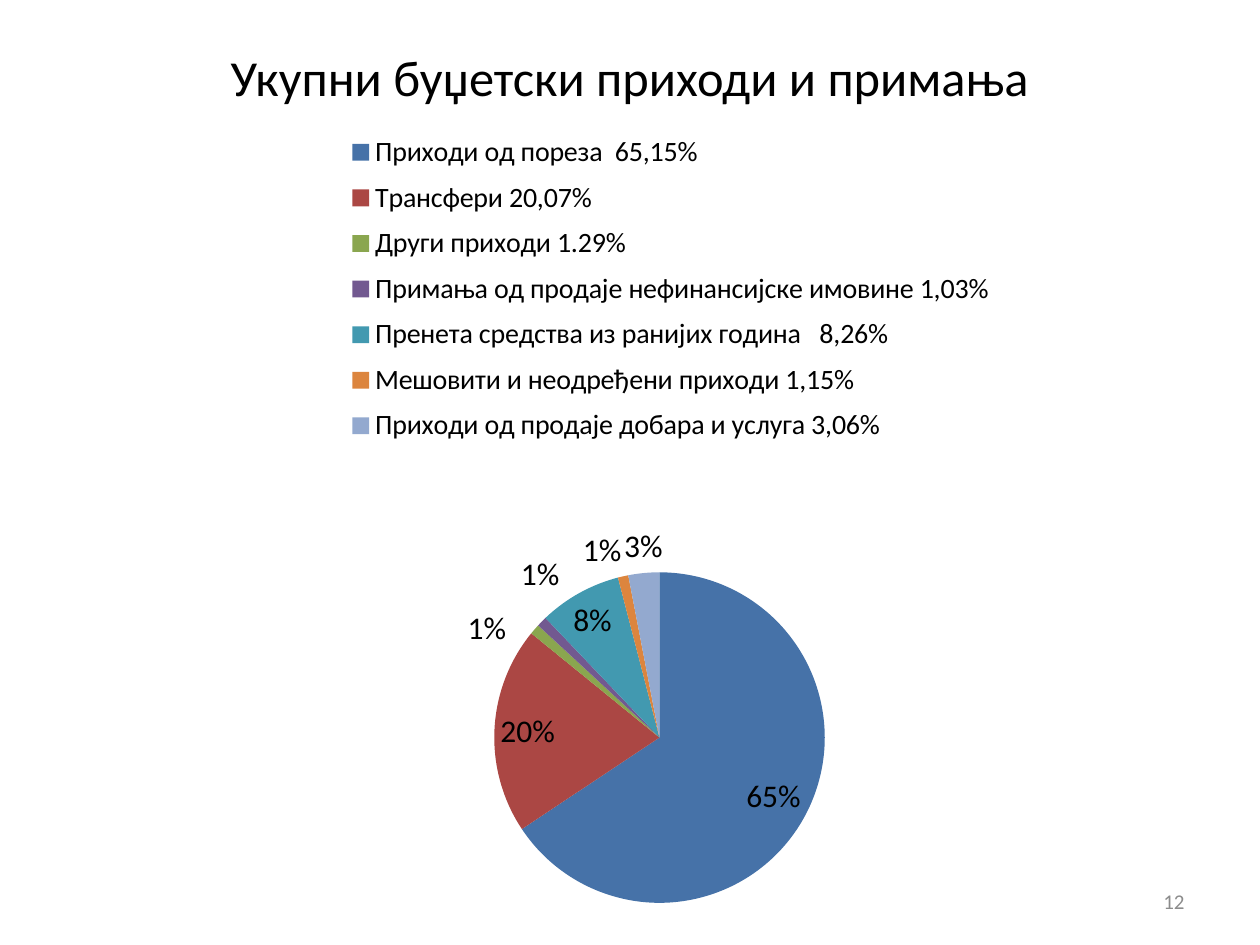
from dataclasses import dataclass

from lxml.etree import SubElement
from pptx import Presentation
from pptx.chart.data import CategoryChartData as ChartData
from pptx.dml.color import RGBColor as Color
from pptx.enum.chart import XL_CHART_TYPE as ChartType
from pptx.enum.chart import XL_LABEL_POSITION as LabelPosition
from pptx.enum.chart import XL_LEGEND_POSITION as LegendPosition
from pptx.enum.text import MSO_ANCHOR as Anchor
from pptx.enum.text import PP_ALIGN as Align
from pptx.oxml.ns import qn
from pptx.util import Emu, Pt

PX = 914400 / 126

REVENUES = [
    ("Приходи од пореза  65,15%", 65),
    ("Трансфери 20,07%", 20),
    ("Други приходи 1.29%", 1),
    ("Примања од продаје нефинансијске имовине 1,03%", 1),
    ("Пренета средства из ранијих година   8,26%", 8),
    ("Мешовити и неодређени приходи 1,15%", 1),
    ("Приходи од продаје добара и услуга 3,06%", 3),
]


@dataclass(frozen=True)
class Theme:
    font: str = "Calibri"
    ink: str = "000000"
    muted: str = "8C8C8C"
    slices: tuple = ("4672A8", "AB4744", "8AA64F", "725990",
                     "4299B0", "DC853E", "93A9CF")
    title_size: float = 28.8
    label_size: int = 18
    legend_size: int = 16
    number_size: int = 12


def px(length):
    return Emu(round(length * PX))


def style_font(font, name, size, color):
    font.name = name
    font.size = Pt(size)
    font.color.rgb = Color.from_string(color)


def write_text(frame, text, *, font, size, color, align):
    para = frame.paragraphs[0]
    para.alignment = align
    span = para.add_run()
    span.text = text
    style_font(span.font, font, size, color)


def set_layout(parent, before, x, y, width, height, inner=False):
    for old in parent.findall(qn("c:layout")):
        parent.remove(old)
    layout = SubElement(parent, qn("c:layout"))
    manual = SubElement(layout, qn("c:manualLayout"))
    settings = [("layoutTarget", "inner")] if inner else []
    settings += [("xMode", "edge"), ("yMode", "edge"),
                 ("x", x), ("y", y), ("w", width), ("h", height)]
    for tag, value in settings:
        SubElement(manual, qn(f"c:{tag}")).set("val", str(value))
    parent.find(qn(before)).addprevious(layout)


def hide_leader_lines(label_group):
    for old in label_group.findall(qn("c:showLeaderLines")):
        label_group.remove(old)
    SubElement(label_group, qn("c:showLeaderLines")).set("val", "0")


class SlideBuilder:
    def __init__(self, page, theme):
        self.page = page
        self.theme = theme

    def text(self, text, left, top, width, height, *, size, color, align):
        box = self.page.shapes.add_textbox(
            px(left), px(top), px(width), px(height))
        frame = box.text_frame
        frame.word_wrap = True
        frame.vertical_anchor = Anchor.MIDDLE
        write_text(frame, text, font=self.theme.font, size=size,
                   color=color, align=align)

    def pie(self, entries, left, top, width, height):
        theme = self.theme
        data = ChartData()
        data.categories = [name for name, value in entries]
        data.add_series("Series 1", [value for name, value in entries])
        chart = self.page.shapes.add_chart(
            ChartType.PIE, px(left), px(top), px(width), px(height),
            data).chart
        chart.has_title = False
        style_font(chart.font, theme.font, theme.label_size, theme.ink)

        chart.has_legend = True
        legend = chart.legend
        legend.position = LegendPosition.TOP
        legend.include_in_layout = False
        style_font(legend.font, theme.font, theme.legend_size, theme.ink)

        plot = chart.plots[0]
        plot.vary_by_categories = True
        for index, color in enumerate(theme.slices):
            fill = plot.series[0].points[index].format.fill
            fill.solid()
            fill.fore_color.rgb = Color.from_string(color)

        plot.has_data_labels = True
        labels = plot.data_labels
        labels.show_value = True
        labels.show_percentage = False
        labels.number_format = '0"%"'
        labels.number_format_is_linked = False
        labels.position = LabelPosition.BEST_FIT
        style_font(labels.font, theme.font, theme.label_size, theme.ink)
        hide_leader_lines(chart.element.find(".//" + qn("c:dLbls")))

        area = chart.element.find(".//" + qn("c:plotArea"))
        set_layout(area, "c:pieChart", 0.09, 0.58, 0.91, 0.42, inner=True)
        key = chart.element.find(".//" + qn("c:legend"))
        set_layout(key, "c:overlay", 0.25, 0.01, 0.61, 0.42)


def main():
    theme = Theme()
    deck = Presentation()
    deck.slide_width, deck.slide_height = px(1260), px(945)
    builder = SlideBuilder(deck.slides.add_slide(deck.slide_layouts[6]), theme)
    builder.text("Укупни буџетски приходи и примања", 63, 37, 1134, 78,
                 size=theme.title_size, color=theme.ink, align=Align.CENTER)
    builder.pie(REVENUES, 53, 116, 1113, 787)
    builder.text("12", 903, 876, 294, 50, size=theme.number_size,
                 color=theme.muted, align=Align.RIGHT)
    deck.save("out.pptx")


if __name__ == "__main__":
    main()
